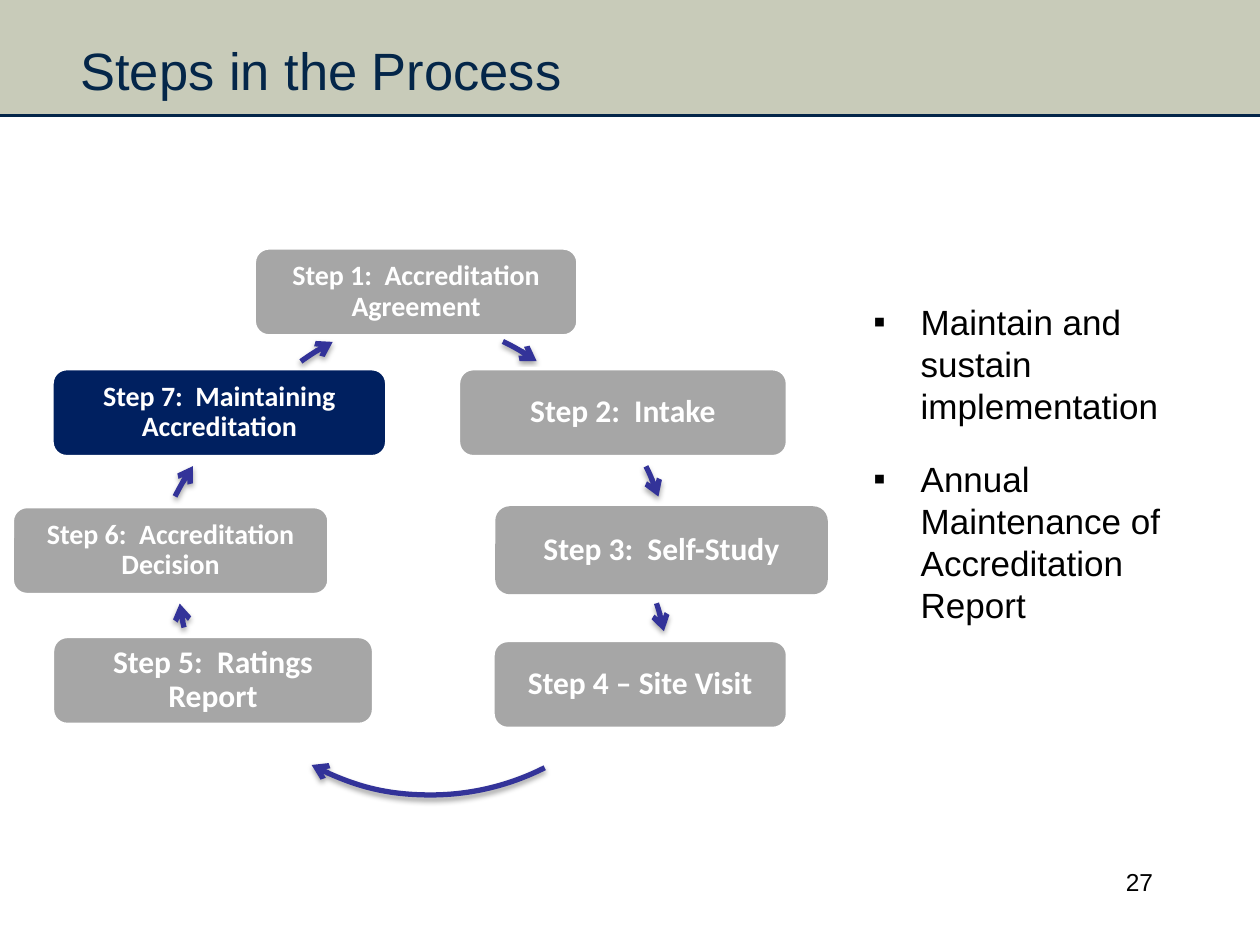
from math import atan2, degrees

from lxml.etree import SubElement as Sub
from pptx import Presentation
from pptx.dml.color import RGBColor as Rgb
from pptx.enum.shapes import MSO_CONNECTOR as Line, MSO_SHAPE as Kind
from pptx.enum.text import MSO_ANCHOR as Anchor, PP_ALIGN as Align
from pptx.oxml.ns import qn
from pptx.util import Pt

HEX = {"band": "C8CBB9", "ink": "042649", "gray": "A6A6A6", "navy": "002060",
       "arrow": "333399", "white": "FFFFFF", "black": "000000"}
TITLE = "Steps in the Process"
PAGE = "27"
# text, left, top, width, font size, fill, outlined
STEPS = [
    ("Step 1:  Accreditation Agreement", 145.3, 141.7, 185, 16, "gray", True),
    ("Step 2:  Intake", 262, 210.7, 188, 18, "gray", True),
    ("Step 3:  Self-Study", 283, 289.3, 190, 18, "gray", False),
    ("Step 4 – Site Visit", 281.7, 366, 168.3, 18, "gray", True),
    ("Step 5:  Ratings Report", 30, 363.7, 183.5, 18, "gray", True),
    ("Step 6:  Accreditation Decision", 7, 289.5, 181, 16, "gray", True),
    ("Step 7:  Maintaining Accreditation", 29.7, 210.7, 191.3, 16, "navy",
     True),
]
STEP_H = 50.3
# left and top of each circle, then start and end of its arrow
ARROWS = [
    ((80.6, 180.7), (287.5, 195), (306.7, 206.5)),
    ((95.8, 185.8), (369.4, 266.4), (376.6, 283.7)),
    ((94.3, 245.5), (375, 344.8), (379.4, 360.7)),
    ((102.2, 166.3), (311.3, 438.7), (178.1, 437.2)),
    ((101.5, 182.2), (105.1, 358.6), (103, 344.9)),
    ((85, 203.8), (100.1, 283.7), (110.2, 266.4)),
    ((112.3, 179.3), (172, 206.6), (190, 195.1)),
]
ROUND = 288
NOTES = [("Maintain and sustain implementation", 18),
         ("Annual Maintenance of Accreditation Report", 12)]


def color(name):
    return Rgb.from_string(HEX[name])


def stroke(line, name, width):
    line.color.rgb = color(name)
    line.width = Pt(width)


def write(para, text, size, font, name, bold=False):
    run = para.add_run()
    run.text = text
    run.font.size = Pt(size)
    run.font.name = font
    run.font.bold = bold
    run.font.color.rgb = color(name)


def add_box(slide, *rect):
    frame = slide.shapes.add_textbox(*map(Pt, rect)).text_frame
    frame.word_wrap = True
    return frame


def add_step(slide, text, left, top, width, size, fill, outlined):
    box = slide.shapes.add_shape(
        Kind.ROUNDED_RECTANGLE, *map(Pt, (left, top, width, STEP_H)))
    box.shadow.inherit = False
    box.fill.solid()
    box.fill.fore_color.rgb = color(fill)
    if outlined:
        stroke(box.line, "white", 2)
    else:
        box.line.fill.background()
    frame = box.text_frame
    frame.word_wrap = True
    frame.vertical_anchor = Anchor.MIDDLE
    frame.margin_left = frame.margin_right = Pt(7.5)
    frame.margin_top = frame.margin_bottom = Pt(7.5)
    para = frame.paragraphs[0]
    para.alignment = Align.CENTER
    para.line_spacing = 0.9
    write(para, text, size, "Calibri", "white", True)


def add_arrow(slide, corner, *ends):
    """Draw a clockwise arc with an open head and a soft shadow."""
    arc = slide.shapes.add_shape(
        Kind.ARC, *map(Pt, corner), Pt(ROUND), Pt(ROUND))
    midx, midy = (side + ROUND / 2 for side in corner)
    for i, (x, y) in enumerate(ends):
        angle = degrees(atan2(y - midy, x - midx)) % 360
        arc.adjustments[i] = angle * 0.6
    arc.fill.background()
    stroke(arc.line, "arrow", 3)
    props = arc._element.spPr
    Sub(props.find(qn("a:ln")), qn("a:tailEnd"), type="arrow")
    arc.shadow.inherit = False
    cast = Sub(props.find(qn("a:effectLst")), qn("a:outerShdw"),
               blurRad=str(Pt(3.1)), dist=str(Pt(1.8)), dir="5400000",
               rotWithShape="0")
    tint = Sub(cast, qn("a:srgbClr"), val=HEX["black"])
    Sub(tint, qn("a:alpha"), val="35000")


def add_notes(slide):
    frame = add_box(slide, 492, 168, 210, 78)
    for i, (text, gap) in enumerate(NOTES):
        para = frame.add_paragraph() if i else frame.paragraphs[0]
        para.space_after = Pt(gap)
        props = para._p.get_or_add_pPr()
        props.set("marL", str(Pt(27)))
        props.set("indent", str(Pt(-27)))
        Sub(props, qn("a:buFont"), typeface="Arial")
        Sub(props, qn("a:buChar"), char="▪")
        write(para, text, 20, "Arial", "black")


def add_head(slide):
    band = slide.shapes.add_shape(Kind.RECTANGLE, 0, 0, Pt(720), Pt(66))
    band.shadow.inherit = False
    band.fill.solid()
    band.fill.fore_color.rgb = color("band")
    band.line.fill.background()
    rule = slide.shapes.add_connector(
        Line.STRAIGHT, 0, Pt(66), Pt(720), Pt(66))
    stroke(rule.line, "ink", 2.25)
    Sub(rule._element.spPr, qn("a:effectLst"))

    title = slide.shapes.title
    title.left, title.top, title.width, title.height = map(
        Pt, (30, 18.4, 612, 48))
    slide.shapes._spTree.append(title._element)
    frame = title.text_frame
    frame.vertical_anchor = Anchor.TOP
    frame.margin_left = Pt(16)
    para = frame.paragraphs[0]
    para.alignment = Align.LEFT
    write(para, TITLE, 30, "Arial", "ink")


def main():
    deck = Presentation()
    deck.slide_width, deck.slide_height = Pt(720), Pt(540)
    slide = deck.slides.add_slide(deck.slide_layouts[5])
    add_head(slide)
    for step, arrow in zip(STEPS, ARROWS):
        add_step(slide, *step)
        add_arrow(slide, *arrow)
    add_notes(slide)
    para = add_box(slide, 516, 492, 150, 36).paragraphs[0]
    para.alignment = Align.RIGHT
    write(para, PAGE, 14, "Arial", "black")
    deck.save("out.pptx")


if __name__ == "__main__":
    main()
